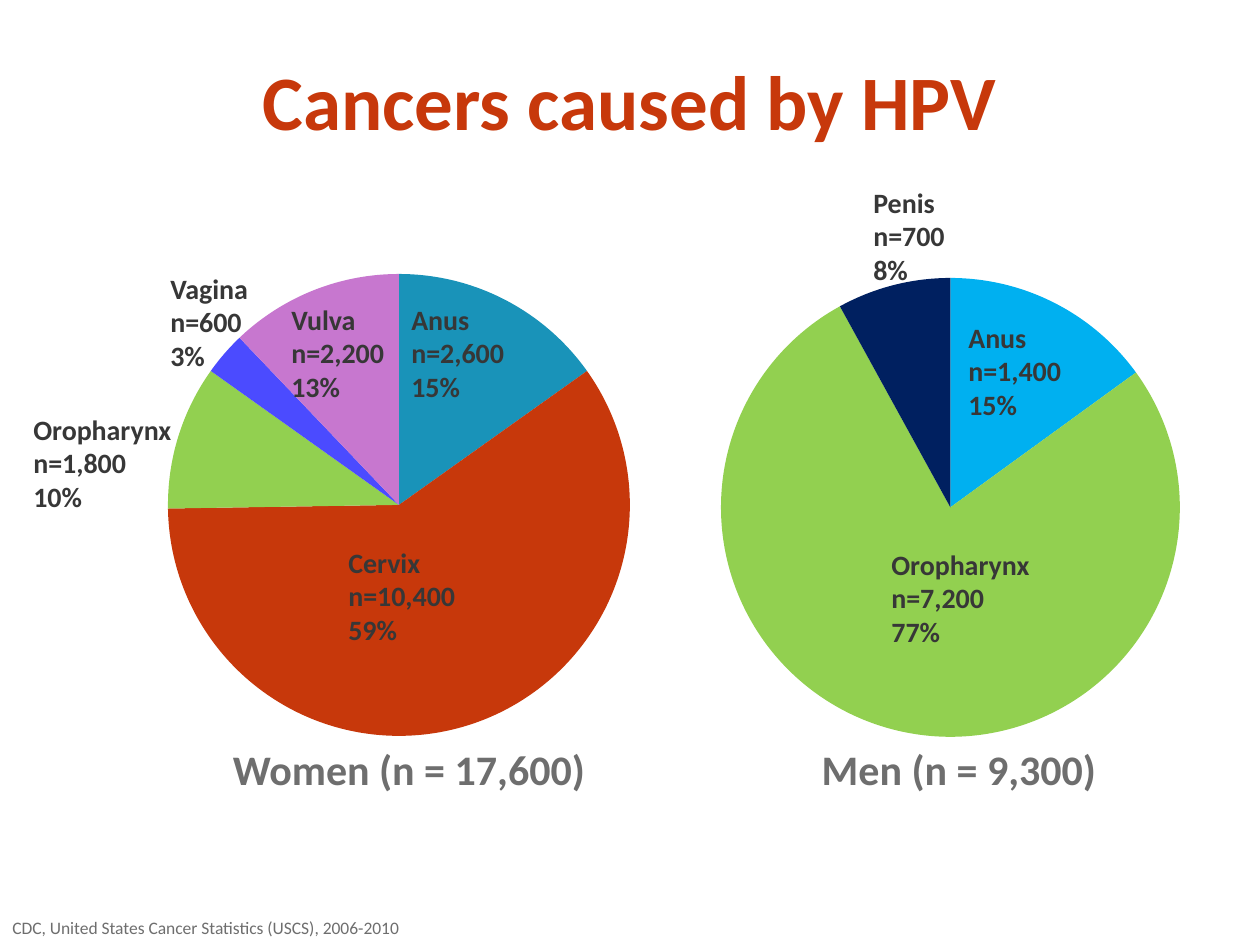
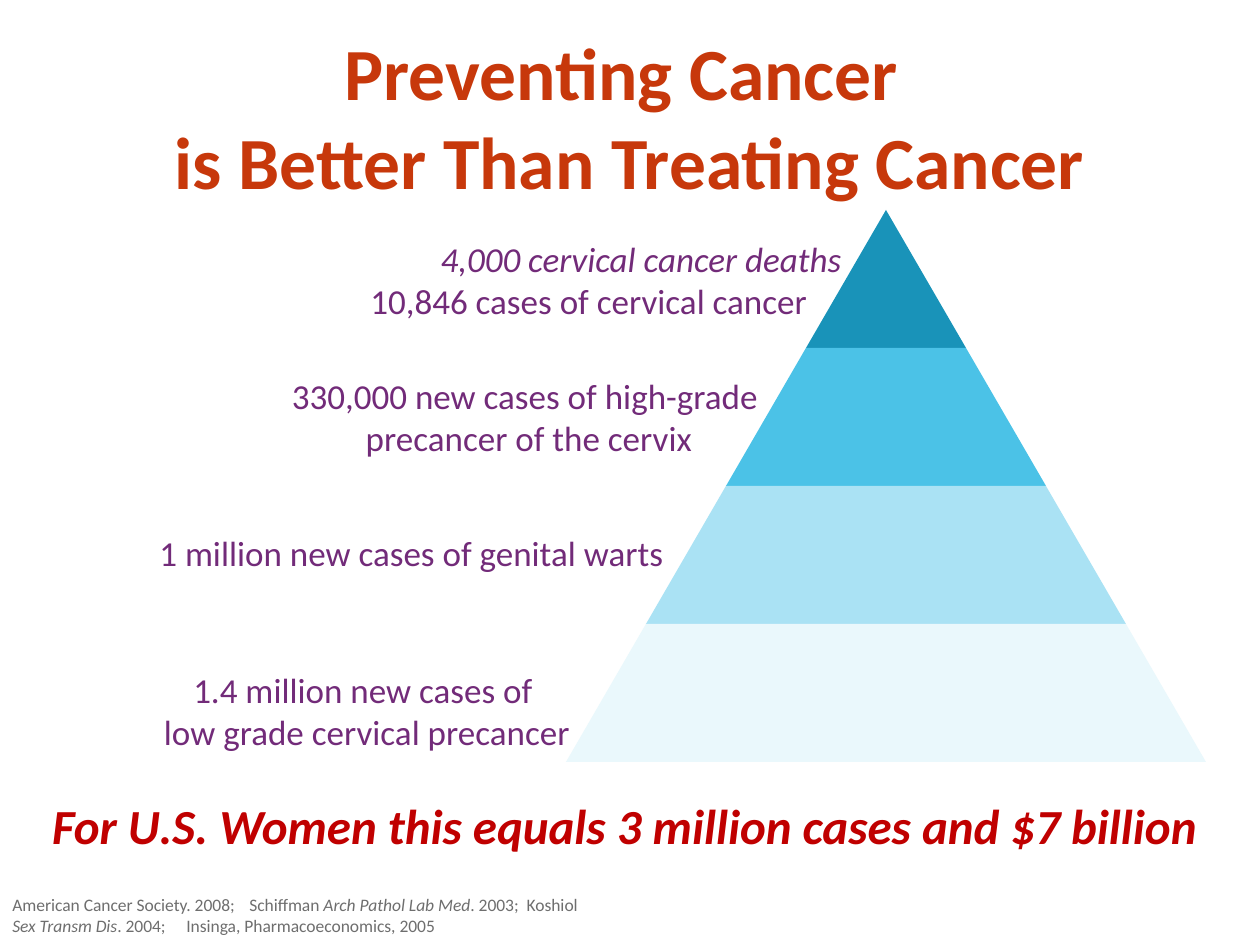
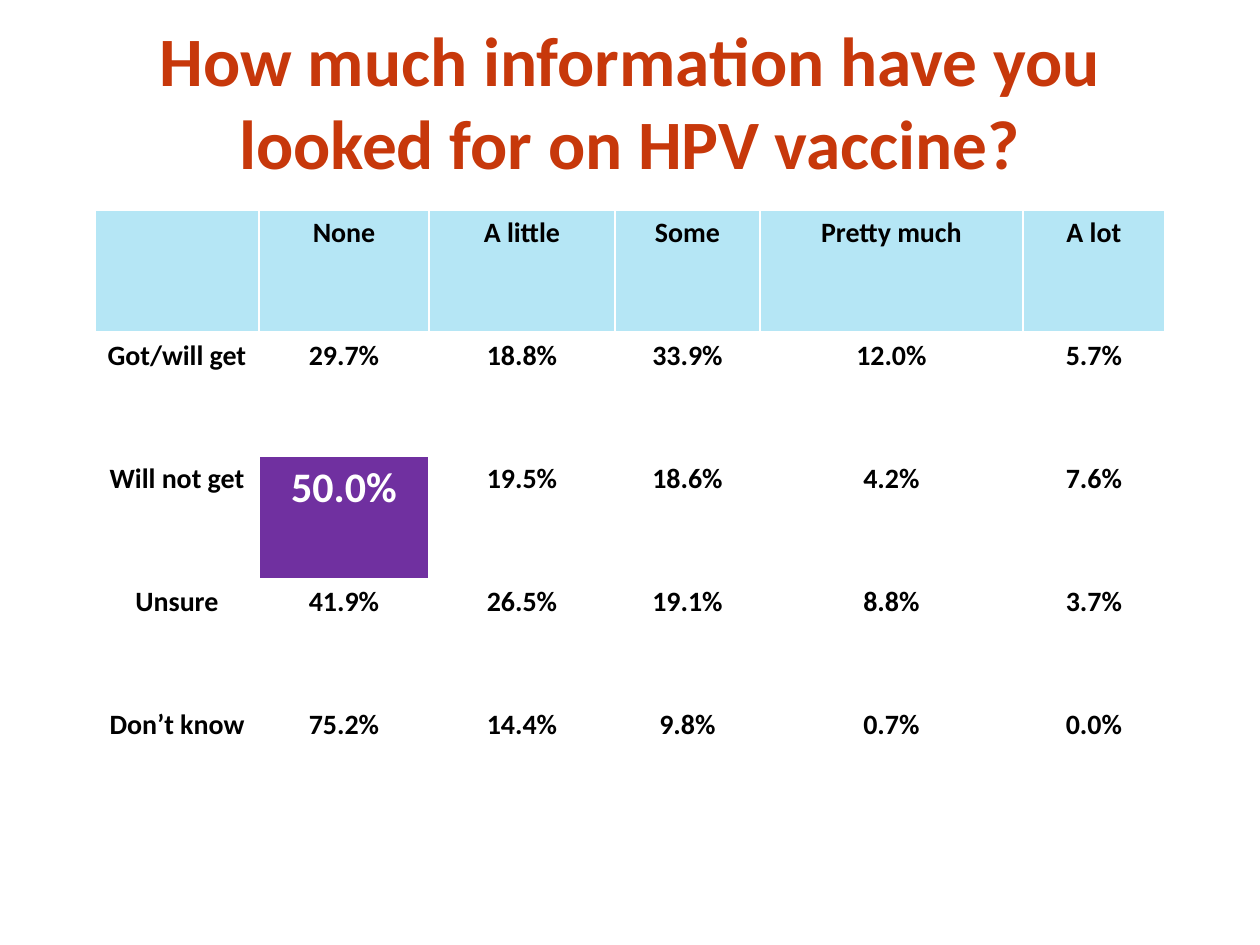
"""Build three slides on HPV cancers, their prevention and vaccine information."""
from pptx import Presentation
from pptx.chart.data import CategoryChartData
from pptx.dml.color import RGBColor
from pptx.enum.chart import XL_CHART_TYPE
from pptx.enum.text import MSO_ANCHOR, MSO_AUTO_SIZE, PP_ALIGN
from pptx.oxml import parse_xml
from pptx.oxml.ns import nsdecls
from pptx.util import Pt

PIE = XL_CHART_TYPE.PIE
LEFT, CENTER, RIGHT = PP_ALIGN.LEFT, PP_ALIGN.CENTER, PP_ALIGN.RIGHT
TOP, MIDDLE, BOTTOM = MSO_ANCHOR.TOP, MSO_ANCHOR.MIDDLE, MSO_ANCHOR.BOTTOM
NO_AUTOFIT = MSO_AUTO_SIZE.NONE

EMU_PER_PX = 914400 / 126
SLIDE_WIDTH, SLIDE_HEIGHT = 1260, 945
FONT = "Calibri"
TITLE_ONLY = 5
TITLE_BOX = (63, 21, 1134, 158)

WHITE = RGBColor(0xFF, 0xFF, 0xFF)
BLACK = RGBColor(0x00, 0x00, 0x00)
ORANGE = RGBColor(0xC7, 0x38, 0x0B)
GRAY = RGBColor(0x6E, 0x6E, 0x6E)
CHARCOAL = RGBColor(0x37, 0x37, 0x37)
TEAL = RGBColor(0x19, 0x93, 0xB9)
GREEN = RGBColor(0x92, 0xD0, 0x50)
BLUE = RGBColor(0x4B, 0x4B, 0xFF)
ORCHID = RGBColor(0xC7, 0x77, 0xCF)
CYAN = RGBColor(0x00, 0xB0, 0xF0)
NAVY = RGBColor(0x00, 0x20, 0x60)
PLUM = RGBColor(0x72, 0x2B, 0x79)
RED = RGBColor(0xC0, 0x00, 0x00)
PURPLE = RGBColor(0x70, 0x30, 0xA0)
HEADER_BLUE = RGBColor(0xB5, 0xE6, 0xF5)
PYRAMID_COLORS = (TEAL, RGBColor(0x4B, 0xC2, 0xE7),
                  RGBColor(0xAA, 0xE2, 0xF4), RGBColor(0xEA, 0xF8, 0xFC))


def emu(px):
    """Turn px into EMU."""
    return round(px * EMU_PER_PX)


def write(paragraph, text, size=16, color=BLACK, bold=False, italic=False, align=LEFT):
    """Add formatted text to a paragraph, with a line break at each newline."""
    paragraph.alignment = align
    for index, line in enumerate(text.split("\n")):
        if index:
            paragraph.add_line_break()
        run = paragraph.add_run()
        run.text = line
        font = run.font
        font.name, font.size, font.color.rgb = FONT, Pt(size), color
        font.bold, font.italic = bold, italic


class Deck:
    """Hold the shared style and the current slide."""

    def __init__(self):
        """Start an empty presentation."""
        self.presentation = Presentation()
        self.presentation.slide_width = emu(SLIDE_WIDTH)
        self.presentation.slide_height = emu(SLIDE_HEIGHT)
        self.slide = None

    def start(self, title, size, box=TITLE_BOX):
        """Add a slide with its title."""
        layout = self.presentation.slide_layouts[TITLE_ONLY]
        self.slide = self.presentation.slides.add_slide(layout)
        shape = self.slide.shapes.title
        shape.left, shape.top, shape.width, shape.height = map(emu, box)
        frame = shape.text_frame
        frame.auto_size, frame.vertical_anchor = NO_AUTOFIT, MIDDLE
        write(frame.paragraphs[0], title, size=size, color=ORANGE, bold=True, align=CENTER)

    def frame(self, box, wrap=True, anchor=TOP):
        """Add a text box and return its text frame."""
        frame = self.slide.shapes.add_textbox(*map(emu, box)).text_frame
        frame.word_wrap, frame.vertical_anchor = wrap, anchor
        return frame

    def text(self, text, box, wrap=True, **style):
        """Add a text box of one paragraph."""
        write(self.frame(box, wrap).paragraphs[0], text, **style)

    def references(self, box, lines, tab):
        """Add hanging reference lines of (text, italic) pieces with a tab stop."""
        frame = self.frame(box, anchor=BOTTOM)
        for index, pieces in enumerate(lines):
            paragraph = frame.add_paragraph() if index else frame.paragraphs[0]
            properties = paragraph._p.get_or_add_pPr()
            properties.set("marL", str(emu(48)))
            properties.set("indent", str(-emu(48)))
            properties.append(parse_xml(
                f'<a:tabLst {nsdecls("a")}><a:tab pos="{emu(tab)}" algn="l"/></a:tabLst>'))
            paragraph.line_spacing = 0.8
            if index:
                paragraph.space_before = Pt(2.5)
            for text, italic in pieces:
                write(paragraph, text, size=10, color=GRAY, italic=italic)

    def pie(self, box, circle, values, colors):
        """Add a pie chart whose circle (left, top, diameter) is set in px."""
        data = CategoryChartData()
        data.categories = [str(number) for number in range(1, len(values) + 1)]
        data.add_series("Series 1", values)
        chart = self.slide.shapes.add_chart(PIE, *map(emu, box), data).chart
        chart.has_legend = chart.has_title = False
        chart.font.name, chart.font.size, chart.font.color.rgb = FONT, Pt(18), BLACK
        for index, color in enumerate(colors):
            part = chart.plots[0].series[0].points[index].format
            part.fill.solid()
            part.fill.fore_color.rgb = color
            part.line.fill.background()
        left, top, width, height = box
        x, y, diameter = circle
        places = {"x": (x - left) / width, "y": (y - top) / height,
                  "w": diameter / width, "h": diameter / height}
        settings = "".join(f'<c:{name} val="{value:.4f}"/>' for name, value in places.items())
        plot_area = chart._chartSpace.xpath("c:chart/c:plotArea")[0]
        for layout in plot_area.xpath("c:layout"):
            plot_area.remove(layout)
        plot_area.insert(0, parse_xml(
            f'<c:layout {nsdecls("c")}><c:manualLayout><c:layoutTarget val="inner"/>'
            f'<c:xMode val="edge"/><c:yMode val="edge"/>{settings}'
            '</c:manualLayout></c:layout>'))

    def polygon(self, points, color):
        """Add a filled outline without a line."""
        builder = self.slide.shapes.build_freeform(*points[0], scale=EMU_PER_PX)
        builder.add_line_segments(points[1:], close=True)
        shape = builder.convert_to_shape()
        shape.shadow.inherit = False
        shape.fill.solid()
        shape.fill.fore_color.rgb = color
        shape.line.fill.background()

    def cell(self, cell, text, fill, top=1, bottom=1, **style):
        """Fill one table cell and draw its white borders."""
        properties = cell._tc.get_or_add_tcPr()
        for side, points in zip("LRTB", (1, 1, top, bottom)):
            properties.append(parse_xml(
                f'<a:ln{side} {nsdecls("a")} w="{Pt(points)}"><a:solidFill>'
                f'<a:srgbClr val="{WHITE}"/></a:solidFill></a:ln{side}>'))
        cell.fill.solid()
        cell.fill.fore_color.rgb = fill
        if text:
            write(cell.text_frame.paragraphs[0], text, bold=True, align=CENTER, **style)

    def table(self, left, top, widths, heights, rows, highlight):
        """Add a table with a header row and one highlighted cell."""
        box = (left, top, sum(widths), sum(heights))
        table = self.slide.shapes.add_table(len(rows), len(widths), *map(emu, box)).table
        table.first_row = table.horz_banding = False
        for column, width in zip(table.columns, widths):
            column.width = emu(width)
        for row, height in zip(table.rows, heights):
            row.height = emu(height)
        for r, row in enumerate(rows):
            for c, text in enumerate(row):
                style = {"fill": WHITE if r else HEADER_BLUE}
                if (r, c) == highlight:
                    style = {"fill": PURPLE, "color": WHITE, "size": 24}
                self.cell(table.cell(r, c), text, top=3 if r == 1 else 1,
                          bottom=1 if r else 3, **style)


def cancers_slide(deck):
    """Show the cancers by site for women and men."""
    deck.start("Cancers caused by HPV", 44)
    deck.pie((150, 170, 498, 669), (168, 274, 462), (15, 59, 10, 3, 12),
             (TEAL, ORANGE, GREEN, BLUE, ORCHID))
    deck.pie((703, 214, 494, 586), (721, 278, 459), (15, 77, 8), (CYAN, GREEN, NAVY))
    site_labels = (
        ("Anus", 2600, 15, 399, 296),
        ("Cervix", 10400, 59, 336, 539),
        ("Oropharynx", 1800, 10, 21, 406),
        ("Vagina", 600, 3, 158, 265),
        ("Vulva", 2200, 13, 279, 296),
        ("Anus", 1400, 15, 956, 314),
        ("Oropharynx", 7200, 77, 879, 541),
        ("Penis", 700, 8, 861, 179),
    )
    for site, count, percent, left, top in site_labels:
        deck.text(f"{site}\nn={count:,}\n{percent}%", (left, top, 199, 115),
                  color=CHARCOAL, bold=True)
    for caption, left, width in (("Women (n = 17,600)", 215, 388), ("Men (n = 9,300)", 756, 406)):
        deck.text(caption, (left, 737, width, 64), size=24, color=GRAY, bold=True, align=CENTER)
    deck.text("CDC, United States Cancer Statistics (USCS), 2006-2010",
              (0, 911, 746, 34), size=10, color=GRAY)


def prevention_slide(deck):
    """Show the pyramid of cases that prevention avoids."""
    deck.start("Preventing Cancer \nis Better Than Treating Cancer", 42, (10, 21, 1239, 189))
    apex_x, apex_y, step, half_step = 886, 210, 138, 80
    for level, color in enumerate(PYRAMID_COLORS):
        upper, lower = level * half_step, (level + 1) * half_step
        top = apex_y + level * step
        corners = ((apex_x - lower, top + step), (apex_x - upper, top),
                   (apex_x + upper, top), (apex_x + lower, top + step))
        deck.polygon(list(dict.fromkeys(corners)), color)
    cancer = deck.frame((358, 210, 496, 118))
    deaths = cancer.paragraphs[0]
    deaths.line_spacing = 1.5
    write(deaths, "4,000 cervical cancer deaths", size=20, color=PLUM, italic=True, align=RIGHT)
    write(cancer.add_paragraph(), "10,846 cases of cervical cancer", size=20, color=PLUM)
    case_labels = (
        ("330,000 new cases of high-grade \nprecancer of the cervix", (270, 368, 518, 97), CENTER),
        ("1 million new cases of genital warts", (147, 525, 546, 55), LEFT),
        ("1.4 million new cases of \nlow grade cervical precancer", (145, 662, 444, 97), CENTER),
    )
    for text, box, align in case_labels:
        deck.text(text, box, wrap=False, size=20, color=PLUM, align=align)
    deck.text("For U.S. Women this equals 3 million cases and $7 billion ", (0, 789, 1260, 72),
              size=28, color=RED, bold=True, italic=True, align=CENTER)
    deck.references((0, 890, 1186, 52), (
        (("American Cancer Society. 2008;\tSchiffman ", False),
         ("Arch Pathol Lab Med", True), (". 2003;  Koshiol", False)),
        (("Sex Transm Dis", True), (". 2004;\tInsinga, Pharmacoeconomics, 2005", False)),
    ), tab=258)


def information_slide(deck):
    """Show how much information people looked for."""
    deck.start("How much information have you looked for on HPV vaccine?", 39.6)
    rows = (
        ("", "None", "A little", "Some", "Pretty much", "A lot"),
        ("Got/will get", "29.7%", "18.8%", "33.9%", "12.0%", "5.7%"),
        ("Will not get", "50.0%", "19.5%", "18.6%", "4.2%", "7.6%"),
        ("Unsure", "41.9%", "26.5%", "19.1%", "8.8%", "3.7%"),
        ("Don’t know", "75.2%", "14.4%", "9.8%", "0.7%", "0.0%"),
    )
    deck.table(95, 210, (164, 170, 186, 145, 263, 142), (123, 123, 123, 123, 148),
               rows, highlight=(2, 1))


def main():
    """Build and save the presentation."""
    deck = Deck()
    cancers_slide(deck)
    prevention_slide(deck)
    information_slide(deck)
    deck.presentation.save("out.pptx")


if __name__ == "__main__":
    main()
